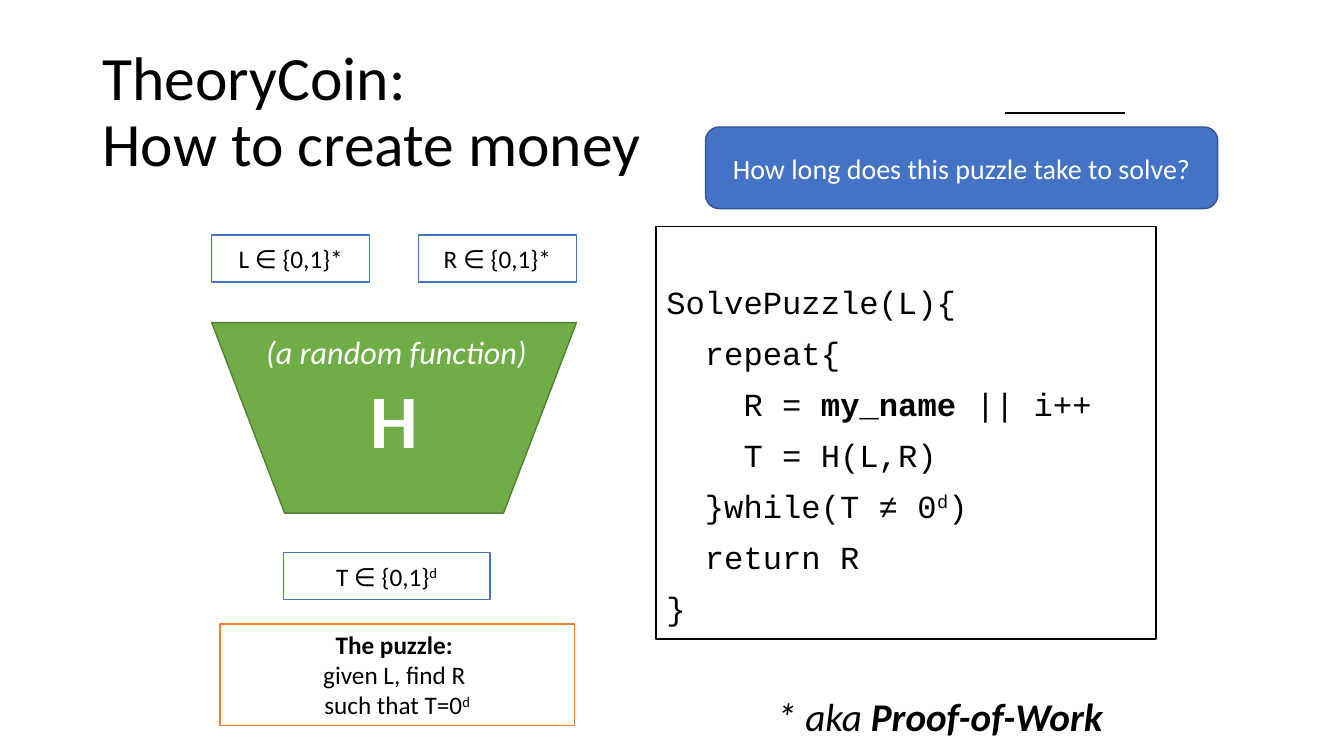
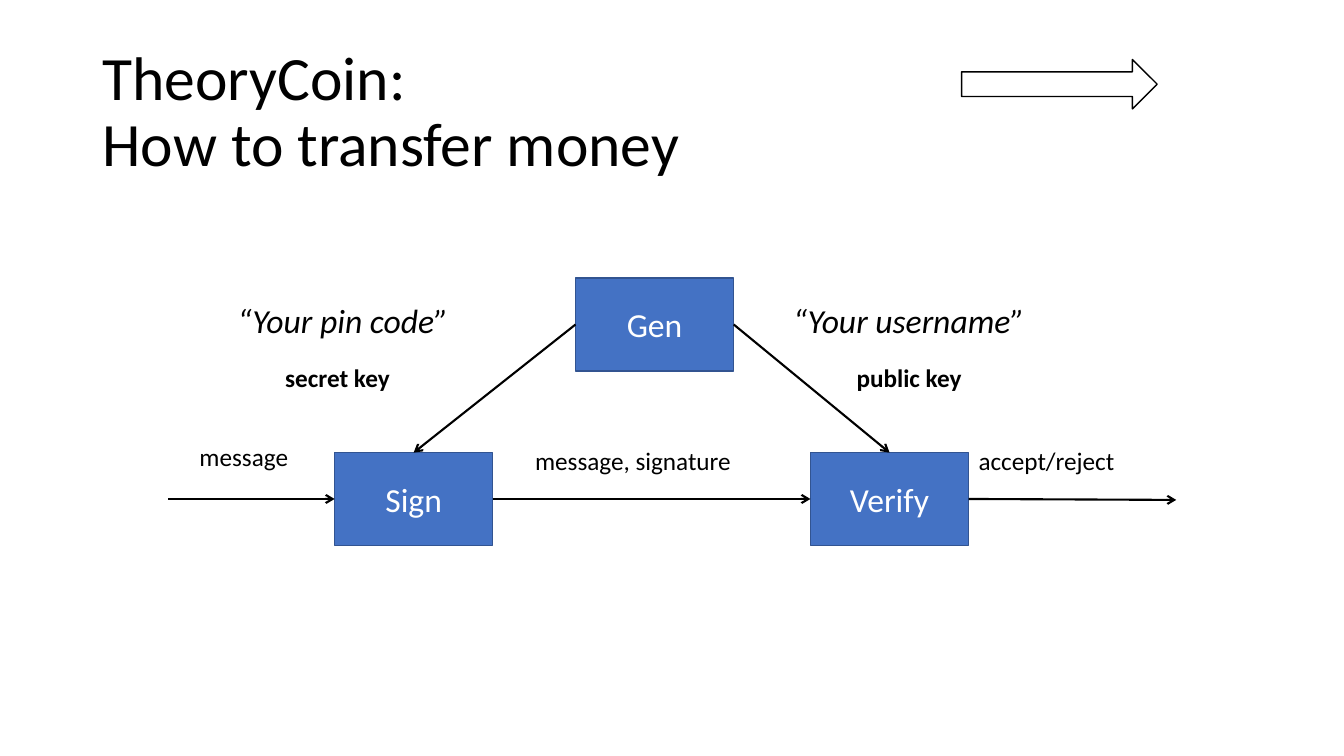
from pptx import Presentation
from pptx.dml.color import RGBColor
from pptx.enum.shapes import MSO_CONNECTOR, MSO_SHAPE
from pptx.enum.text import MSO_ANCHOR, MSO_AUTO_SIZE, PP_ALIGN
from pptx.oxml.ns import qn
from pptx.util import Pt
from lxml import etree

RECT, ROUND = MSO_SHAPE.RECTANGLE, MSO_SHAPE.ROUNDED_RECTANGLE
FUNNEL, ARROW = MSO_SHAPE.FLOWCHART_MANUAL_OPERATION, MSO_SHAPE.RIGHT_ARROW
LEFT, CENTER = PP_ALIGN.LEFT, PP_ALIGN.CENTER
TOP, MIDDLE = MSO_ANCHOR.TOP, MSO_ANCHOR.MIDDLE
SITE = {"top": 0, "left": 1, "bottom": 2, "right": 3}

COLORS = {"black": "000000", "white": "FFFFFF", "blue": "4472C4", "navy": "325491",
          "green": "70AD47", "forest": "538035", "orange": "ED7D31"}
FONT, MONO = "Calibri", "Courier New"
BOLD, ITALIC, SUPER = {"bold": True}, {"italic": True}, {"baseline": 30000}
CODE_STEP = 27.6  # two monospaced characters at 23 pt


def color(name):
    return RGBColor.from_string(COLORS[name])


class Deck:
    def __init__(self):
        self.prs = Presentation()
        self.prs.slide_width, self.prs.slide_height = Pt(960), Pt(540)

    def slide(self, title, layout=5):
        self.s = self.prs.slides.add_slide(self.prs.slide_layouts[layout])
        sp = self.place(self.s.shapes.title, 66, 29, 828, 104.4)
        self.text(sp, [[title]], 44, align=LEFT, spacing={"line_spacing": 0.9})

    def place(self, sp, *box):
        for name, v in zip(("left", "top", "width", "height"), box):
            setattr(sp, name, Pt(v))
        return sp

    def paint(self, sp, fill, line):
        sp.fill.solid()
        sp.fill.fore_color.rgb = color(fill)
        sp.line.color.rgb = color(line)
        sp.line.width = Pt(1)

    def text(self, sp, paras, size, ink="black", font=FONT, align=CENTER,
             anchor=MIDDLE, wrap=True, base=None, spacing=None):
        """Each paragraph is a list of runs: a string or (string, format)."""
        tf = sp.text_frame
        tf.auto_size = MSO_AUTO_SIZE.NONE
        tf.word_wrap, tf.vertical_anchor = wrap, anchor
        for i, runs in enumerate(paras):
            p = tf.add_paragraph() if i else tf.paragraphs[0]
            p.alignment = align
            for name, v in (spacing or {}).items():
                setattr(p, name, v)
            for item in runs:
                words, extra = (item, {}) if isinstance(item, str) else item
                for j, part in enumerate(words.split("\n")):
                    if j:
                        p.add_line_break()
                    if part:
                        self.add_run(p, part, ink, {"name": font, "size": Pt(size),
                                                    **(base or {}), **extra})
        return tf

    def add_run(self, p, words, ink, fmt):
        r = p.add_run()
        r.text = words
        r.font.color.rgb = color(ink)
        for name, v in fmt.items():
            if name == "baseline":
                r.font._element.set(name, str(v))
            else:
                setattr(r.font, name, v)

    def shape(self, kind, box, fill, line, paras=(), size=18, **style):
        sp = self.s.shapes.add_shape(kind, *map(Pt, box))
        sp.shadow.inherit = False
        self.paint(sp, fill, line)
        self.text(sp, paras, size, **style)
        return sp

    def label(self, box, runs, size=18, **style):
        sp = self.s.shapes.add_textbox(*map(Pt, box))
        style = {"align": LEFT, "anchor": TOP, "wrap": False, **style}
        self.text(sp, [runs], size, **style)

    def code(self, box, lines, size):
        """Lines are (indent level, runs)."""
        sp = self.place(self.s.placeholders[1], *box)
        self.paint(sp, "white", "black")
        tf = self.text(sp, [runs for _, runs in lines], size, font=MONO, align=LEFT,
                       anchor=TOP, spacing={"line_spacing": 0.9, "space_before": Pt(11.5)})
        tf.margin_top = Pt(43)
        tf.paragraphs[0].space_before = Pt(0)
        for p, (level, _) in zip(tf.paragraphs, lines):
            pPr = p._p.get_or_add_pPr()
            pPr.set("marL", str(Pt(level * CODE_STEP)))
            pPr.set("indent", "0")
            etree.SubElement(pPr, qn("a:buNone"))

    def line(self, start, end, arrow=True):
        """An end is a point or (shape, side)."""
        points = [(0, 0) if isinstance(e[1], str) else e for e in (start, end)]
        c = self.s.shapes.add_connector(MSO_CONNECTOR.STRAIGHT,
                                        *(Pt(v) for pt in points for v in pt))
        for e, connect in ((start, c.begin_connect), (end, c.end_connect)):
            if isinstance(e[1], str):
                connect(e[0], SITE[e[1]])
        c.line.color.rgb = color("black")
        c.line.width = Pt(1.5)
        if arrow:
            etree.SubElement(c.line._get_or_add_ln(), qn("a:tailEnd"), type="arrow")
        etree.SubElement(c._element.spPr, qn("a:effectLst"))


def create_money(d):
    d.slide("TheoryCoin: \nHow to create money", layout=1)

    # Hash function with its inputs and output
    funnel = d.shape(FUNNEL, (151.2, 230.4, 260.6, 136.1), "green", "forest",
                     [["H"]], 54, ink="white", base=BOLD)
    for side in ("left", "right", "top", "bottom"):
        setattr(funnel.text_frame, "margin_" + side, 0)
    for x, y, w, runs in ((151.2, 167.8, 113, ["L ∈ {0,1}*"]),
                          (298.8, 167.8, 113, ["R ∈ {0,1}*"]),
                          (202.3, 394.6, 147.6, ["T ∈ {0,1}", ("d", SUPER)])):
        d.shape(RECT, (x, y, w, 33.8), "white", "blue", [runs])
    d.label((157, 234, 252.7, 35.3), ["(a random function)"], 23,
            ink="white", base=ITALIC, align=CENTER, wrap=True)

    # Puzzle and the code that solves it
    d.code((468.7, 162, 357.1, 294.5), [
        (0, ["SolvePuzzle(L){"]),
        (1, ["repeat{"]),
        (2, ["R = ", ("my_name", BOLD), " || i++"]),
        (2, ["T = H(L,R)"]),
        (1, ["}while(T ≠ 0", ("d", SUPER), ")"]),
        (1, ["return R"]),
        (0, ["}"])], 23)
    d.shape(RECT, (157, 445.7, 253.4, 72.7), "white", "orange",
            [[("The puzzle: \n", BOLD), "given L, find R "],
             ["such that T=0", ("d", SUPER)]], anchor=TOP)

    # Question and footnote
    d.line((717.8, 80.6), (803.5, 80.6), arrow=False)
    d.label((547.9, 491, 249.8, 41), ["* aka ", ("Proof-of-Work", BOLD)], 28, base=ITALIC)
    d.shape(ROUND, (504, 90.7, 365.8, 58.3), "blue", "navy",
            [["How long does this puzzle take to solve?"]], 20, ink="white")


def transfer_money(d):
    d.slide("TheoryCoin: \nHow to transfer money")
    d.shape(ARROW, (686.9, 42.5, 139.7, 35.3), "white", "black")

    # Signature scheme
    gen, sign, verify = (
        d.shape(RECT, (x, y, 113, 66.2), "blue", "navy", [[name]], 24, ink="white")
        for name, x, y in (("Gen", 411.1, 198.7), ("Sign", 239, 323.3),
                           ("Verify", 578.9, 323.3)))
    for start, end in (((120.2, 356.4), (sign, "left")),
                       ((sign, "right"), (verify, "left")),
                       ((verify, "right"), (840.2, 357.1)),
                       ((gen, "left"), (sign, "top")),
                       ((gen, "right"), (verify, "top"))):
        d.line(start, end)

    # Labels
    for words, x, y, w, size, base in (
            ("message", 135.4, 311.8, 78.5, 18, None),
            ("message, signature", 375.1, 314.6, 156.2, 18, None),
            ("accept/reject", 691.9, 314.6, 113, 18, None),
            ("secret key", 196.6, 255.6, 90, 18, BOLD),
            ("public key", 604.8, 255.6, 90, 18, BOLD),
            ("“Your username”", 559.4, 211, 182.2, 24, ITALIC),
            ("“Your pin code”", 162.7, 211, 166.3, 24, ITALIC)):
        d.label((x, y, w, size * 1.6), [words], size, base=base)


def main():
    d = Deck()
    create_money(d)
    transfer_money(d)
    d.prs.save("out.pptx")


if __name__ == "__main__":
    main()
